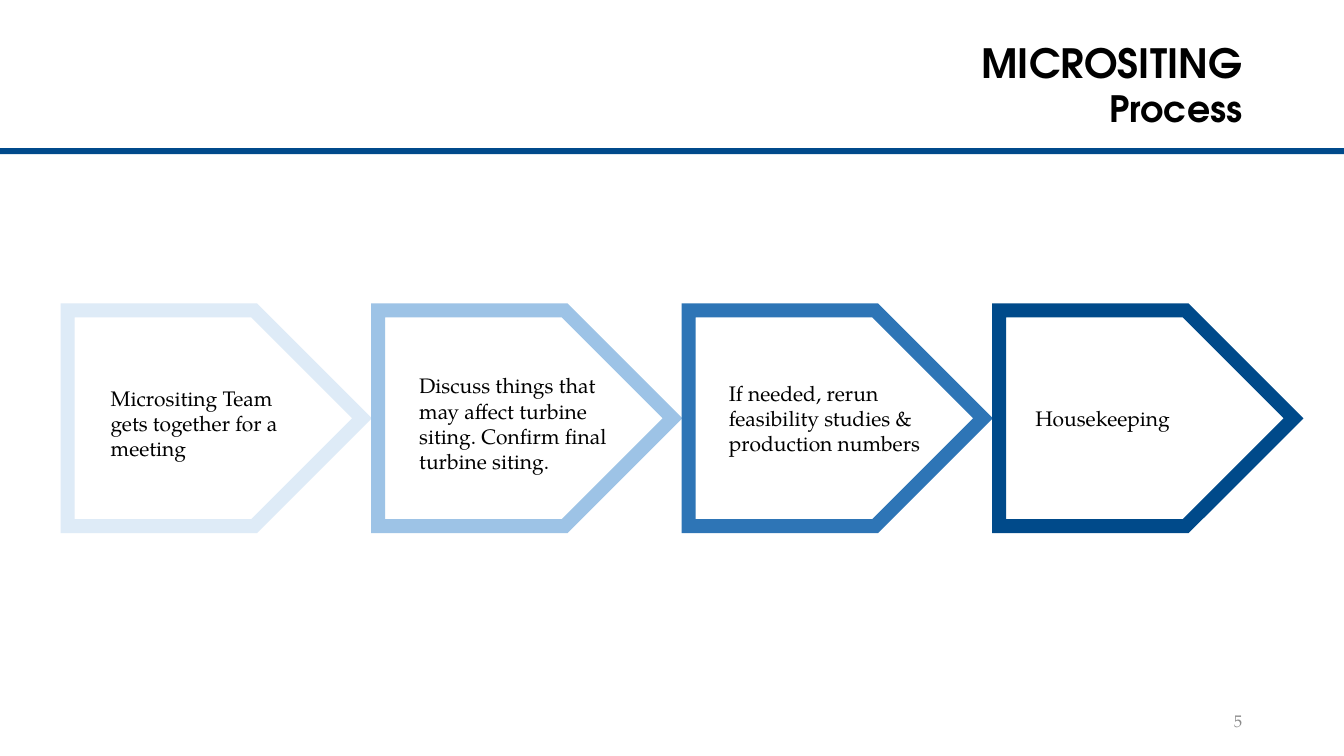
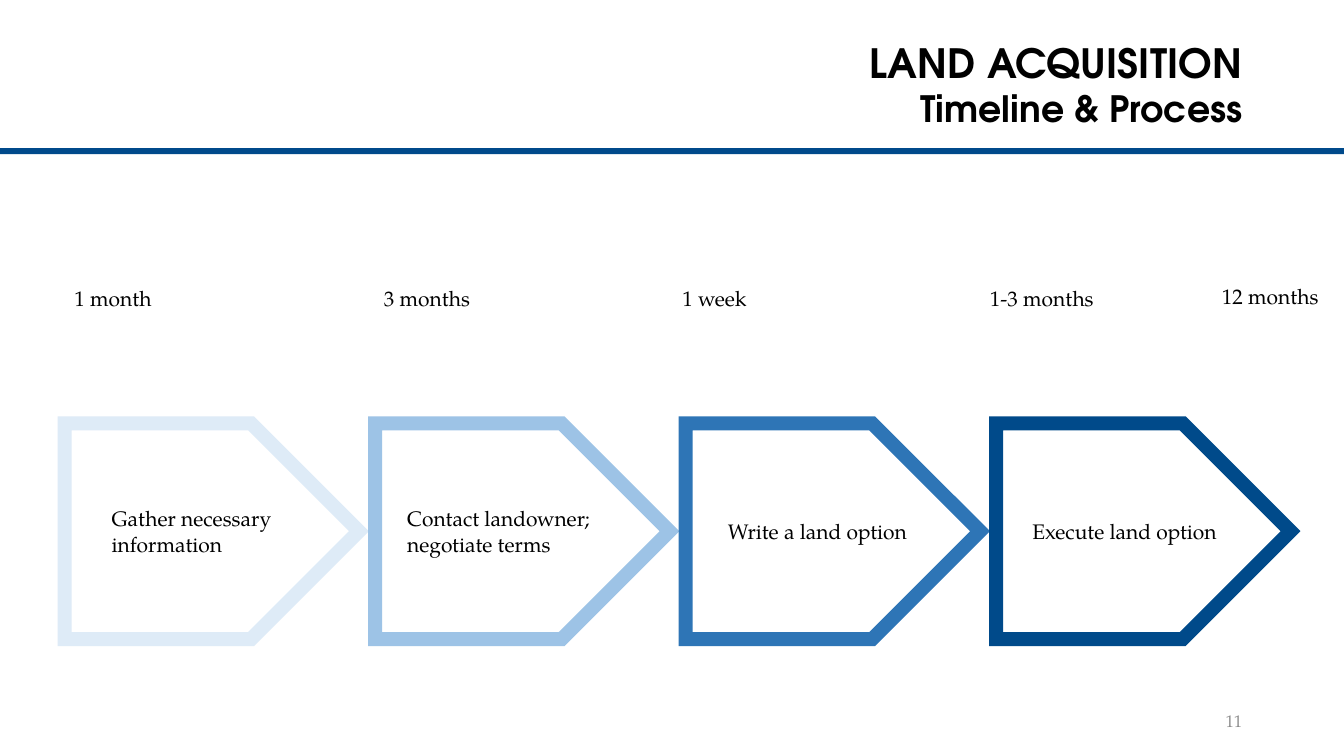
from lxml.etree import SubElement
from pptx import Presentation
from pptx.dml.color import RGBColor
from pptx.enum.shapes import MSO_SHAPE
from pptx.enum.text import MSO_ANCHOR, MSO_AUTO_SIZE, PP_ALIGN
from pptx.oxml.ns import qn
from pptx.util import Inches, Pt

SLIDE_WIDTH, SLIDE_HEIGHT = 13.33, 7.5
BAND_COLOR = "004A8B"
STEP_COLORS = ["DEEBF7", "9DC3E6", "2E75B6", "004A8A"]
STEP_WIDTH, STEP_HEIGHT, STEP_PITCH = 2.92, 2.14, 3.08
TEXT_WIDTH = 2.13
HEADING_BOX = (1.89, 0.4, 10.53, 0.95)
NUMBER_BOX = (9.42, 6.95, 3, 0.4)

HEADING_FONT = {"name": "TeX Gyre Adventor", "bold": True, "color": "000000"}
BODY_FONT = {"name": "TeX Gyre Pagella", "color": "000000"}
TITLE_STYLE = {
    "font": {**HEADING_FONT, "size": Pt(28.8)},
    "paragraph": {"alignment": PP_ALIGN.RIGHT, "line_spacing": 0.9},
    "frame": {"vertical_anchor": MSO_ANCHOR.MIDDLE},
}
SUBTITLE_STYLE = {
    "font": {**HEADING_FONT, "size": Pt(25.9)},
    "paragraph": {"alignment": PP_ALIGN.RIGHT, "line_spacing": 0.8},
    "frame": {"vertical_anchor": MSO_ANCHOR.TOP},
}
NUMBER_STYLE = {
    "font": {**BODY_FONT, "size": Pt(12), "color": "8C8C8C"},
    "paragraph": {"alignment": PP_ALIGN.RIGHT},
    "frame": {"vertical_anchor": MSO_ANCHOR.MIDDLE},
}
STEP_STYLE = {
    "font": {**BODY_FONT, "size": Pt(15)},
    "paragraph": {"alignment": PP_ALIGN.LEFT},
    "frame": {"vertical_anchor": MSO_ANCHOR.MIDDLE},
}

SLIDES = [
    {
        "title": "MICROSITING",
        "subtitle": "Process",
        "number": "5",
        "origin": (0.67, 3.08),
        "steps": [
            ("Micrositing Team gets together for a meeting", 0.33, 0.05),
            ("Discuss things that may affect turbine siting. Confirm final turbine siting.", 0.31, 0.05),
            ("If needed, rerun feasibility studies & production numbers", 0.3, 0),
            ("Housekeeping", 0.26, 0),
        ],
        "durations": [],
    },
    {
        "title": "LAND ACQUISITION",
        "subtitle": "Timeline & Process",
        "number": "11",
        "origin": (0.64, 4.2),
        "steps": [
            ("Gather necessary information", 0.37, 0),
            ("Contact landowner; negotiate terms", 0.22, 0),
            ("Write a land option", 0.32, 0),
            ("Execute land option", 0.26, 0),
        ],
        "durations": [
            ("1 month", 0.64, 2.78),
            ("3 months", 3.71, 2.78),
            ("1 week", 6.67, 2.78),
            ("1-3 months", 9.72, 2.78),
            ("12 months", 12.02, 2.76),
        ],
    },
]


def rgb(color):
    return RGBColor.from_string(color)


def set_attributes(target, values):
    for name, value in values.items():
        setattr(target, name, value)


def write_text(shape, text, style):
    frame = shape.text_frame
    set_attributes(frame, {"word_wrap": True, "auto_size": MSO_AUTO_SIZE.NONE, **style["frame"]})
    frame.text = text
    paragraph = frame.paragraphs[0]
    set_attributes(paragraph, style["paragraph"])
    font_values = dict(style["font"])
    paragraph.font.color.rgb = rgb(font_values.pop("color"))
    set_attributes(paragraph.font, font_values)


def add_text(slide, box, text, style):
    shape = slide.shapes.add_textbox(*map(Inches, box))
    write_text(shape, text, style)


def add_band(layout, slide):
    band = slide.shapes.add_shape(
        MSO_SHAPE.RECTANGLE, Inches(0), Inches(1.47), Inches(SLIDE_WIDTH), Inches(0.06))
    band.shadow.inherit = False
    band.fill.solid()
    band.fill.fore_color.rgb = rgb(BAND_COLOR)
    band.line.fill.background()
    layout.shapes.element.append(band.element)


def add_heading(slide, box, title, subtitle):
    left, top, width, height = box
    title_height = 0.49
    title_box = (left, top, width, title_height)
    title_shape = slide.shapes.title
    set_attributes(title_shape, dict(zip(("left", "top", "width", "height"), map(Inches, title_box))))
    write_text(title_shape, title, TITLE_STYLE)
    subtitle_box = (left, top + title_height, width, height - title_height)
    add_text(slide, subtitle_box, subtitle, SUBTITLE_STYLE)


def add_step_outline(slide, left, top, color):
    shape = slide.shapes.add_shape(
        MSO_SHAPE.PENTAGON, *map(Inches, (left, top, STEP_WIDTH, STEP_HEIGHT)))
    shape.shadow.inherit = False
    shape.fill.background()
    shape.line.color.rgb = rgb(color)
    shape.line.width = Pt(10)
    outline = shape.element.spPr.find(qn("a:ln"))
    SubElement(outline, qn("a:miter"), lim="800000")


def add_process(slide, origin, steps):
    left, top = origin
    for index, ((text, indent, drop), color) in enumerate(zip(steps, STEP_COLORS)):
        step_left = left + index * STEP_PITCH
        add_step_outline(slide, step_left, top, color)
        text_box = (step_left + indent, top + drop, TEXT_WIDTH, STEP_HEIGHT)
        add_text(slide, text_box, text, STEP_STYLE)


def add_durations(slide, durations):
    for text, left, top in durations:
        width = min(TEXT_WIDTH, SLIDE_WIDTH - left)
        add_text(slide, (left, top, width, 0.35), text, STEP_STYLE)


def add_process_slide(presentation, layout, content):
    slide = presentation.slides.add_slide(layout)
    add_heading(slide, HEADING_BOX, content["title"], content["subtitle"])
    add_process(slide, content["origin"], content["steps"])
    add_durations(slide, content["durations"])
    add_text(slide, NUMBER_BOX, content["number"], NUMBER_STYLE)
    return slide


def main():
    presentation = Presentation()
    presentation.slide_width = Inches(SLIDE_WIDTH)
    presentation.slide_height = Inches(SLIDE_HEIGHT)
    layout = presentation.slide_layouts[5]
    slides = [add_process_slide(presentation, layout, content) for content in SLIDES]
    add_band(layout, slides[0])
    presentation.save("out.pptx")


if __name__ == "__main__":
    main()
